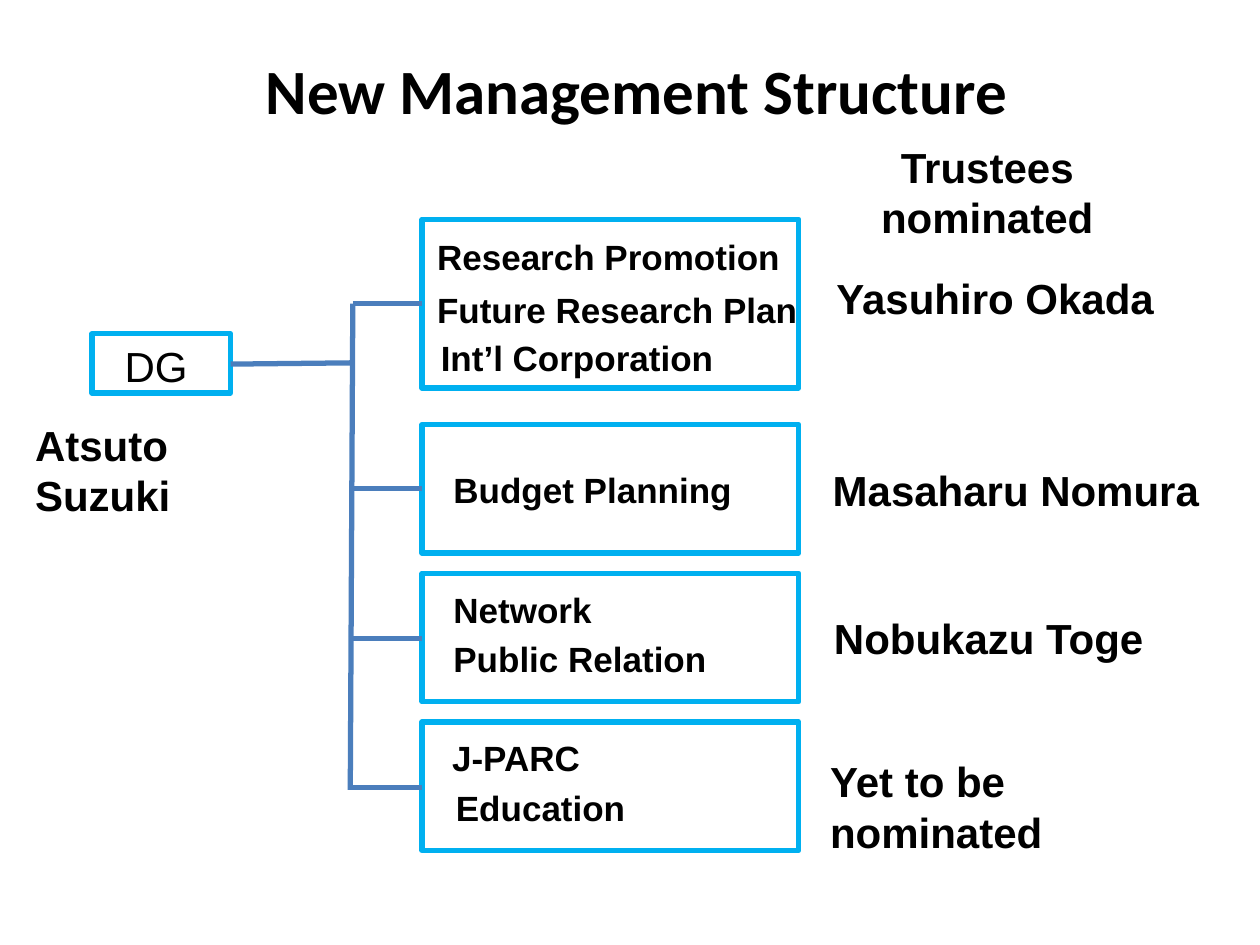
import dataclasses

import pptx
import pptx.dml.color
import pptx.enum.shapes
import pptx.enum.text
import pptx.oxml.ns
import pptx.util
import lxml.etree

PX = 9144
ALIGN = pptx.enum.text.PP_ALIGN


@dataclasses.dataclass(frozen=True)
class Theme:
    text: str = "000000"
    frame: str = "00B0F0"
    branch: str = "4B7EBC"
    heading_font: str = "Calibri"
    body_font: str = "Arial"
    heading_size: int = 36
    name_size: int = 24
    duty_size: int = 20
    line_width: int = 3


THEME = Theme()
BOX_LEFT, BOX_WIDTH = 335, 299
TRUNK_X = 280

DEPARTMENTS = [
    (174, 134, 241, TRUNK_X, [
        ("Research Promotion", 337, 182, 295),
        ("Future Research Plan", 337, 224, 309),
        ("Int’l Corporation", 340, 262, 243),
    ]),
    (337, 102, 388, TRUNK_X, [("Budget Planning", 350, 367, 243)]),
    (455, 102, 507, 277, [
        ("Network", 350, 462, 131),
        ("Public Relation", 350, 501, 223),
    ]),
    (573, 102, 625, TRUNK_X, [
        ("J-PARC", 349, 580, 123),
        ("Education", 352, 619, 156),
    ]),
]

NAMES = [
    ("Trustees nominated", (689, 107, 189, 91), ALIGN.CENTER),
    ("Yasuhiro Okada", (654, 211, 315, 50), ALIGN.LEFT),
    ("Masaharu Nomura", (651, 364, 315, 50), ALIGN.LEFT),
    ("Nobukazu Toge", (652, 481, 315, 50), ALIGN.LEFT),
    ("Yet to be nominated", (649, 595, 323, 91), ALIGN.LEFT),
    ("Atsuto Suzuki", (18, 328, 236, 91), ALIGN.LEFT),
]


def emu(*lengths):
    return [pptx.util.Emu(length * PX) for length in lengths]


def color(value):
    return pptx.dml.color.RGBColor.from_string(value)


def write(box, text, size, font, bold=True, align=ALIGN.LEFT, wrap=False):
    frame = box.text_frame
    frame.word_wrap = wrap
    frame.auto_size = pptx.enum.text.MSO_AUTO_SIZE.SHAPE_TO_FIT_TEXT
    frame.vertical_anchor = pptx.enum.text.MSO_ANCHOR.TOP
    para = frame.paragraphs[0]
    para.alignment = align
    span = para.add_run()
    span.text = text
    span.font.name = font
    span.font.size = pptx.util.Pt(size)
    span.font.bold = bold
    span.font.color.rgb = color(THEME.text)


def add_title(page, text, area):
    title = page.shapes.title
    title.left, title.top, title.width, title.height = emu(*area)
    write(title, text, THEME.heading_size, THEME.heading_font)


def add_label(page, text, area, size, **style):
    box = page.shapes.add_textbox(*emu(*area))
    write(box, text, size, THEME.body_font, **style)


def style_line(line, value):
    line.color.rgb = color(value)
    line.width = pptx.util.Pt(THEME.line_width)


def add_frame(page, area):
    box = page.shapes.add_shape(
        pptx.enum.shapes.MSO_SHAPE.RECTANGLE, *emu(*area))
    box.shadow.inherit = False
    box.fill.background()
    style_line(box.line, THEME.frame)


def add_branch(page, *ends):
    branch = page.shapes.add_connector(
        pptx.enum.shapes.MSO_CONNECTOR.STRAIGHT, *emu(*ends))
    style_line(branch.line, THEME.branch)
    properties = branch.element.find(pptx.oxml.ns.qn("p:spPr"))
    lxml.etree.SubElement(properties, pptx.oxml.ns.qn("a:effectLst"))


def add_department(page, top, height, branch_y, branch_x, duties):
    add_frame(page, (BOX_LEFT, top, BOX_WIDTH, height))
    add_branch(page, branch_x, branch_y, BOX_LEFT, branch_y)
    for text, left, duty_top, width in duties:
        add_label(page, text, (left, duty_top, width, 44), THEME.duty_size)


def main():
    deck = pptx.Presentation()
    deck.slide_width, deck.slide_height = emu(1000, 750)
    page = deck.slides.add_slide(deck.slide_layouts.get_by_name("Title Only"))

    add_title(page, "New Management Structure", (201, 36, 615, 71))
    add_frame(page, (73, 265, 110, 47))
    add_label(page, "DG", (89, 265, 71, 50), THEME.name_size, bold=False)
    add_branch(page, 183, 289, 278, 288)
    add_branch(page, TRUNK_X, 241, 278, 627)
    for department in DEPARTMENTS:
        add_department(page, *department)
    for text, area, align in NAMES:
        add_label(page, text, area, THEME.name_size, align=align, wrap=True)

    deck.save("out.pptx")


if __name__ == "__main__":
    main()
